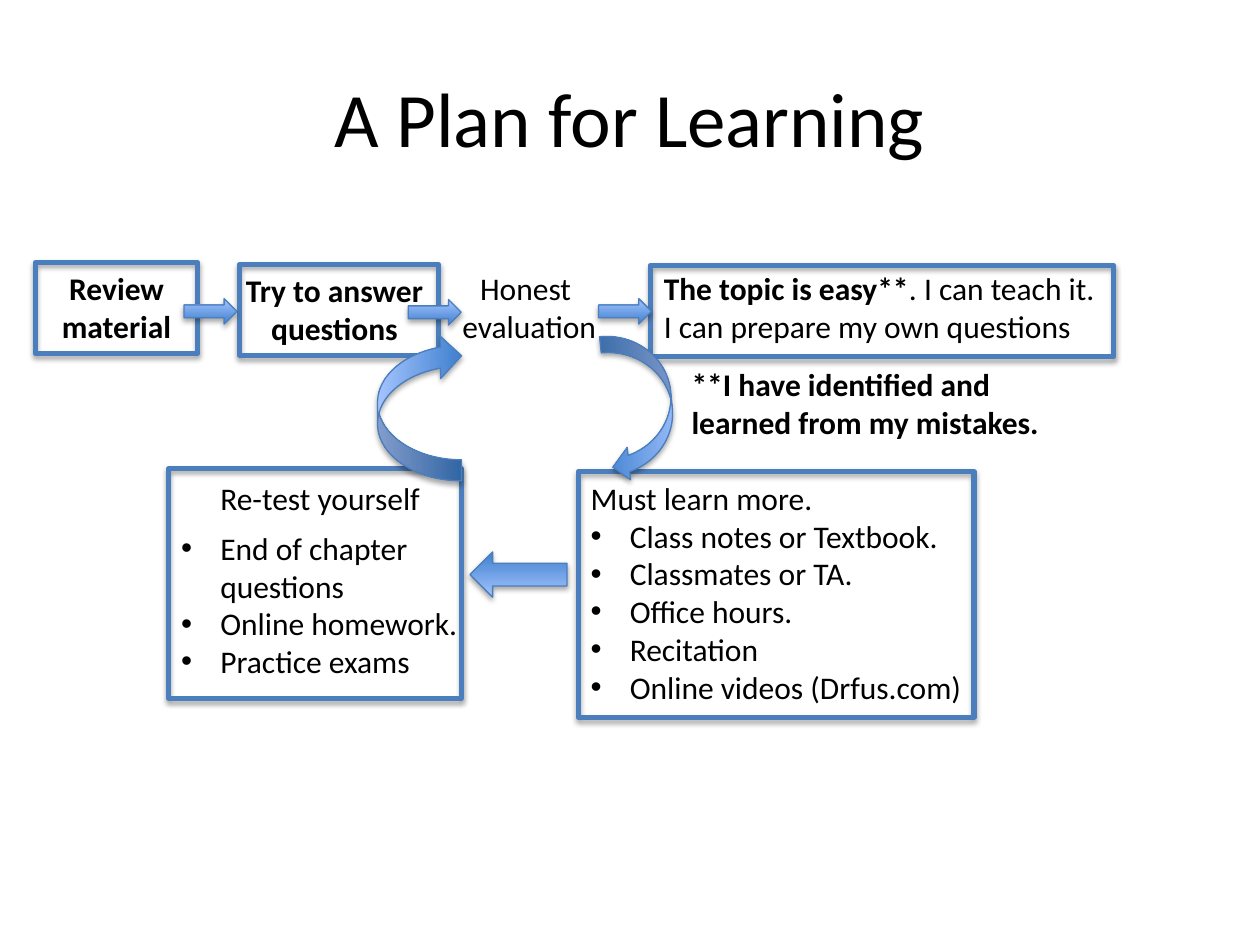
import pptx
import pptx.util
import pptx.dml.color
import pptx.enum.shapes
import pptx.enum.text
from lxml import etree

Pt = pptx.util.Pt
KIND = pptx.enum.shapes.MSO_SHAPE
ALIGN = pptx.enum.text.PP_ALIGN
FIT = pptx.enum.text.MSO_AUTO_SIZE
NS = "http://schemas.openxmlformats.org/drawingml/2006/main"

FONT = "Calibri"
HEX = {"ink": "000000", "line": "4B7EBC", "dark": "3F80CE", "light": "A4C4FF"}
TITLE = "A Plan for Learning"

# Places are left, top, width, height in percent of the slide.
ROW, TALL = 27.8, 9.5
NOTES = [
    ((2.8, ROW, 12.9, TALL), ["Review material"], dict(bold=True, mid=True)),
    ((17.8, 28, 17.5, TALL), ["Try to answer questions"], dict(bold=True, mid=True)),
    ((35.6, ROW, 12.8, TALL), ["Honest ", "evaluation"], dict(mid=True, wrap=False)),
    ((51.7, ROW, 36.7, TALL),
     [[("The topic is easy**", True), (". I can teach it.", False)],
      "I can prepare my own questions"], dict(wrap=False)),
    ((53.9, 38, 32.7, TALL),
     ["**I have identified and learned from my mistakes."], dict(bold=True)),
    ((45.9, 50, 31.6, 25.6),
     ["Must learn more.", "Class notes or Textbook.", "Classmates or TA.",
      "Office hours.", "Recitation", "Online videos (Drfus.com)"],
     dict(wrap=False, dots=1)),
    ((16.5, 50, 20.1, 5.3), ["Re-test yourself"], {}),
    ((13.4, 55.3, 26.3, 17.5),
     ["End of chapter questions", "Online homework.", "Practice exams"],
     dict(dots=0)),
]
FRAMES = [
    (2.8, ROW, 12.9, 9.6), (19, 28, 15.8, 9.6), (51.6, 28.1, 36.8, 9.6),
    (45.9, 49.9, 31.4, 26), (13.4, 49.6, 23.2, 24.3),
]
STEP = (4.2, 2.7)
ARROWS = [
    (KIND.CURVED_DOWN_ARROW, (44.9, 39.6, 11.7, 6.9), 84.2),
    (KIND.CURVED_DOWN_ARROW, (27.5, 38.7, 11.6, 8.9), 270),
    (KIND.RIGHT_ARROW, (47.5, 31.6, *STEP), 0),
    (KIND.RIGHT_ARROW, (32.4, 31.7, *STEP), 0),
    (KIND.RIGHT_ARROW, (14.6, 31.6, *STEP), 0),
    (KIND.RIGHT_ARROW, (37.3, 58.4, 7.7, 4.8), 180),
]

deck = pptx.Presentation()
deck.slide_width = pptx.util.Inches(10)
deck.slide_height = pptx.util.Inches(7.5)
slide = deck.slides.add_slide(deck.slide_layouts[5])


def rgb(name):
    return pptx.dml.color.RGBColor.from_string(HEX[name])


def area(box):
    """Turn percent of the slide into lengths."""
    full = (deck.slide_width, deck.slide_height) * 2
    return [round(part * size / 100) for part, size in zip(box, full)]


def bullet(para):
    props = para._p.get_or_add_pPr()
    props.set("marL", str(pptx.util.Inches(0.31)))
    props.set("indent", str(-pptx.util.Inches(0.31)))
    etree.SubElement(props, f"{{{NS}}}buFont", typeface="Arial")
    etree.SubElement(props, f"{{{NS}}}buChar", char="•")


def write(frame, lines, size=18, bold=False, mid=False, wrap=True, dots=None):
    """Fill a text frame; paragraphs from index dots on get bullets."""
    frame.word_wrap = wrap
    for i, line in enumerate(lines):
        para = frame.paragraphs[0] if i == 0 else frame.add_paragraph()
        para.alignment = ALIGN.CENTER if mid else ALIGN.LEFT
        if dots is not None and i >= dots:
            bullet(para)
        for text, heavy in [(line, bold)] if isinstance(line, str) else line:
            run = para.add_run()
            run.text = text
            run.font.name, run.font.size = FONT, Pt(size)
            run.font.bold = heavy
            run.font.color.rgb = rgb("ink")


def draw(kind, box, width):
    """Add an outlined shape with a soft shadow below it."""
    shape = slide.shapes.add_shape(kind, *area(box))
    shape.line.color.rgb = rgb("line")
    shape.line.width = Pt(width)
    shape.shadow.inherit = False
    glow = shape._element.spPr.find(f"{{{NS}}}effectLst")
    cast = etree.SubElement(glow, f"{{{NS}}}outerShdw", blurRad=str(Pt(3.1)),
                            dist=str(Pt(1.8)), dir="5400000", rotWithShape="0")
    tone = etree.SubElement(cast, f"{{{NS}}}srgbClr", val=HEX["ink"])
    etree.SubElement(tone, f"{{{NS}}}alpha", val="35000")
    return shape


title = slide.shapes.title
title.left, title.top, title.width, title.height = area((5, 4, 90, 16.67))
title.text_frame.vertical_anchor = pptx.enum.text.MSO_ANCHOR.MIDDLE
write(title.text_frame, [TITLE], size=44, mid=True)

for box, lines, style in NOTES:
    note = slide.shapes.add_textbox(*area(box))
    write(note.text_frame, lines, **style)
    note.text_frame.auto_size = FIT.SHAPE_TO_FIT_TEXT

for box in FRAMES:
    draw(KIND.RECTANGLE, box, 3).fill.background()

for kind, box, turn in ARROWS:
    arrow = draw(kind, box, 0.75)
    arrow.rotation = turn
    arrow.fill.gradient()
    arrow.fill.gradient_angle = 90
    for stop, name in zip(arrow.fill.gradient_stops, ("dark", "light")):
        stop.color.rgb = rgb(name)

deck.save("out.pptx")
